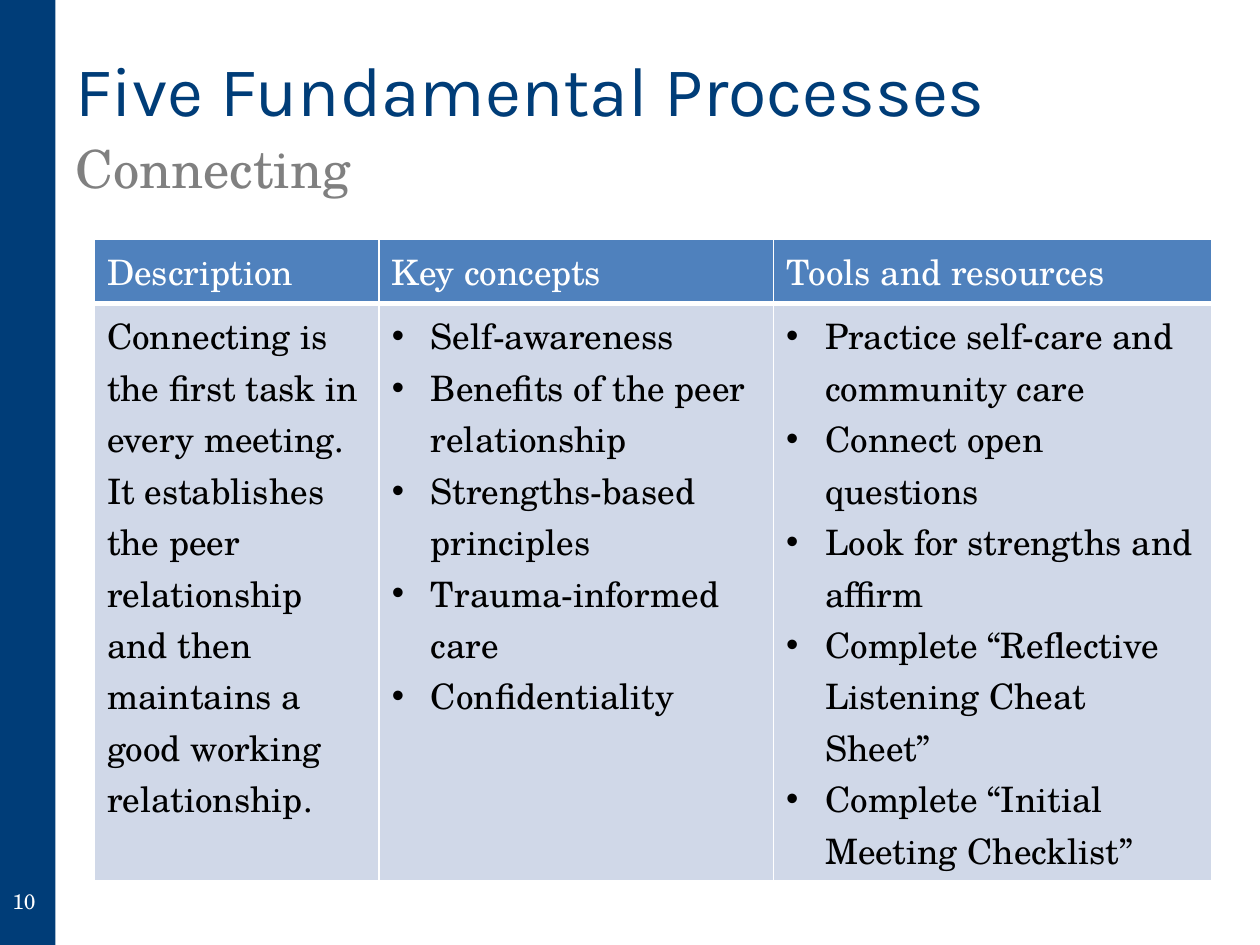
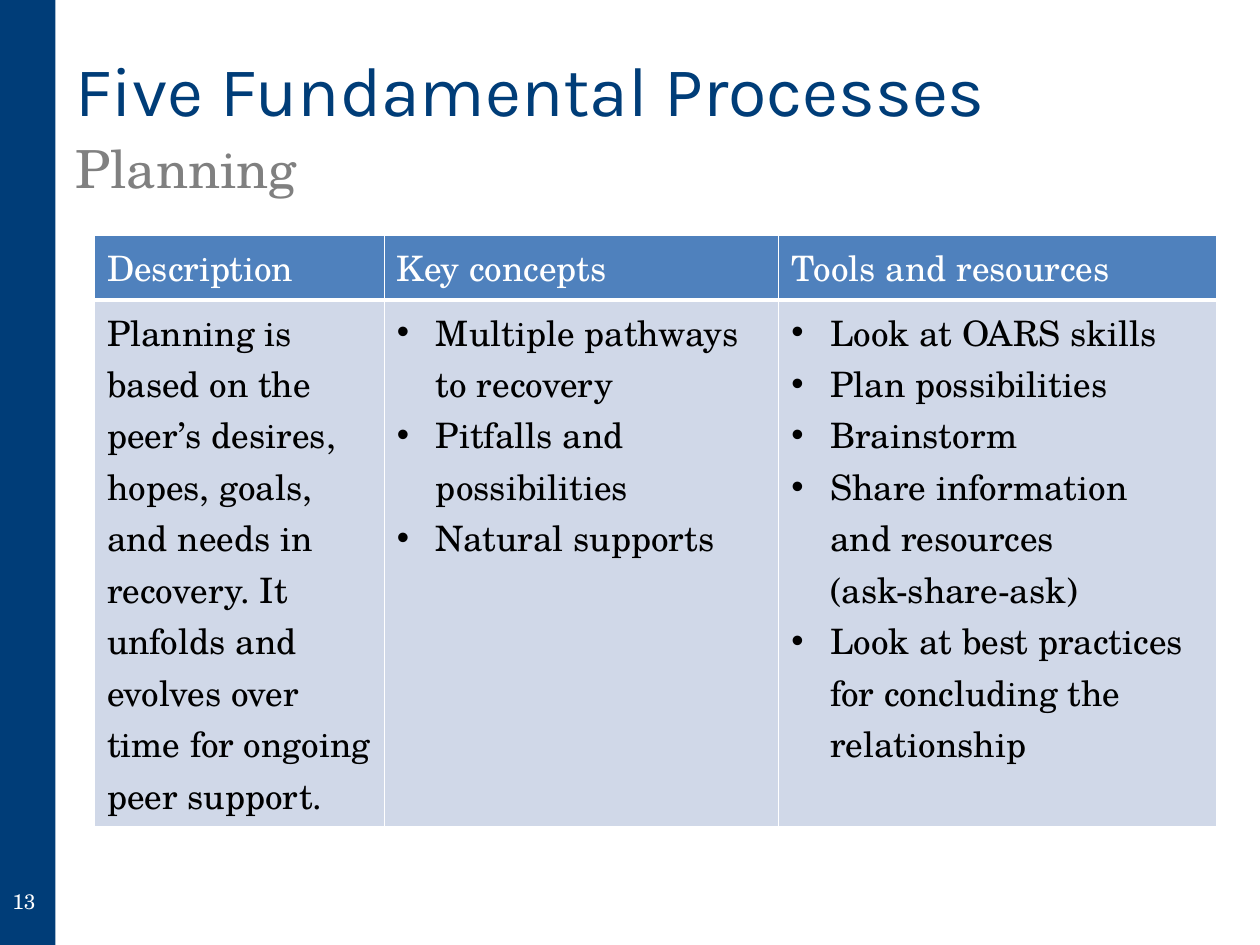
import dataclasses

import lxml.etree
import pptx
import pptx.dml.color
import pptx.enum.shapes
import pptx.enum.text
import pptx.oxml.ns
import pptx.util

SCALE = 9144  # EMU per px, 100 px to the inch
TOP = pptx.enum.text.MSO_ANCHOR.TOP
MIDDLE = pptx.enum.text.MSO_ANCHOR.MIDDLE
HEADS = ["Description", "Key concepts", "Tools and resources"]


@dataclasses.dataclass(frozen=True)
class Theme:
    navy: str = "003D78"
    gray: str = "808080"
    blue: str = "4F81BD"
    pale: str = "D0D8E8"
    white: str = "FFFFFF"
    black: str = "000000"
    sans: str = "Karla"
    serif: str = "TeX Gyre Schola"
    title: int = 40
    sub: int = 30
    cell: int = 20
    page: int = 12


def px(n):
    return pptx.util.Emu(n * SCALE)


def rgb(code):
    return pptx.dml.color.RGBColor.from_string(code)


def node(parent, tag, **attrs):
    item = lxml.etree.SubElement(parent, pptx.oxml.ns.qn(tag))
    for key, value in attrs.items():
        item.set(key, str(value))
    return item


class Deck:
    def __init__(self, theme):
        self.theme = theme
        self.file = pptx.Presentation()
        self.file.slide_width, self.file.slide_height = px(1000), px(750)
        self.slide = None

    def start(self):
        self.slide = self.file.slides.add_slide(self.file.slide_layouts[6])

    def style(self, para, size, color, face):
        font = para.font
        font.size, font.name = pptx.util.Pt(size), face
        font.color.rgb = rgb(color)

    def band(self, x, y, w, h, color):
        kind = pptx.enum.shapes.MSO_SHAPE.RECTANGLE
        bar = self.slide.shapes.add_shape(kind, px(x), px(y), px(w), px(h))
        bar.shadow.inherit = False
        bar.fill.solid()
        bar.fill.fore_color.rgb = rgb(color)
        bar.line.fill.background()

    def text(self, words, area, size, color, face, anchor=TOP, inset=5, before=0):
        box = self.slide.shapes.add_textbox(*map(px, area))
        frame = box.text_frame
        frame.word_wrap = True
        frame.vertical_anchor = anchor
        frame.margin_top = px(inset)
        para = frame.paragraphs[0]
        para.text = words
        para.space_before = pptx.util.Pt(before)
        self.style(para, size, color, face)

    def bullet(self, para):
        props = para._p.get_or_add_pPr()
        props.set("marL", str(px(31)))
        props.set("indent", str(px(-31)))
        font = node(props, "a:buFont", typeface="Arial")
        mark = node(props, "a:buChar", char="•")
        props.insert(0, mark)
        props.insert(0, font)

    def edges(self, cell, base):
        """Draw white cell borders; base is the width of the lower one in points."""
        props = cell._tc.get_or_add_tcPr()
        widths = {"a:lnL": 1, "a:lnR": 1, "a:lnT": 1, "a:lnB": base}
        for spot, (tag, width) in enumerate(widths.items()):
            line = node(props, tag, w=pptx.util.Pt(width))
            node(node(line, "a:solidFill"), "a:srgbClr", val=self.theme.white)
            props.insert(spot, line)

    def fill(self, cell, lines, back, color, base, dots):
        cell.fill.solid()
        cell.fill.fore_color.rgb = rgb(back)
        self.edges(cell, base)
        paras = cell.text_frame.paragraphs
        for i, line in enumerate(lines):
            para = cell.text_frame.add_paragraph() if i else paras[0]
            para.text = line
            self.style(para, self.theme.cell, color, self.theme.serif)
            if dots:
                self.bullet(para)

    def table(self, x, y, cols, rows, body):
        t = self.theme
        area = map(px, (x, y, sum(cols), sum(rows)))
        grid = self.slide.shapes.add_table(2, len(cols), *area).table
        grid.first_row = grid.horz_banding = False
        for row, high in zip(grid.rows, rows):
            row.height = px(high)
        for i, wide in enumerate(cols):
            grid.columns[i].width = px(wide)
            self.fill(grid.cell(0, i), [HEADS[i]], t.blue, t.white, 3, False)
            self.fill(grid.cell(1, i), body[i], t.pale, t.black, 1, i > 0)

    def process(self, page, name, top, first, high, body):
        """Add one slide that describes a process."""
        t = self.theme
        self.start()
        self.band(0, 0, 44, 750, t.navy)
        self.text("Five Fundamental Processes", (50, 20, 900, 167),
                  t.title, t.navy, t.sans, inset=17)
        self.text(page, (0, 695, 233, 40), t.page, t.white, t.serif, MIDDLE)
        self.text(name, (50, 103, 900, 500), t.sub, t.gray, t.serif, before=3)
        self.table(75, top, (first, 313, 348), (51, high), body)


def main():
    deck = Deck(Theme())
    deck.process("10", "Connecting", 190, 226, 458, [
        ["Connecting is the first task in every meeting. It establishes the peer "
         "relationship and then maintains a good working relationship."],
        ["Self-awareness", "Benefits of the peer relationship",
         "Strengths-based principles", "Trauma-informed care", "Confidentiality"],
        ["Practice self-care and community care", "Connect open questions",
         "Look for strengths and affirm",
         "Complete “Reflective Listening Cheat Sheet”",
         "Complete “Initial Meeting Checklist”"],
    ])
    deck.process("13", "Planning", 187, 230, 418, [
        ["Planning is based on the peer’s desires, hopes, goals, and needs in "
         "recovery. It unfolds and evolves over time for ongoing peer support."],
        ["Multiple pathways\nto recovery", "Pitfalls and possibilities",
         "Natural supports"],
        ["Look at OARS skills", "Plan possibilities", "Brainstorm",
         "Share information\nand resources\n(ask-share-ask)",
         "Look at best practices\nfor concluding the relationship"],
    ])
    deck.file.save("out.pptx")


if __name__ == "__main__":
    main()
